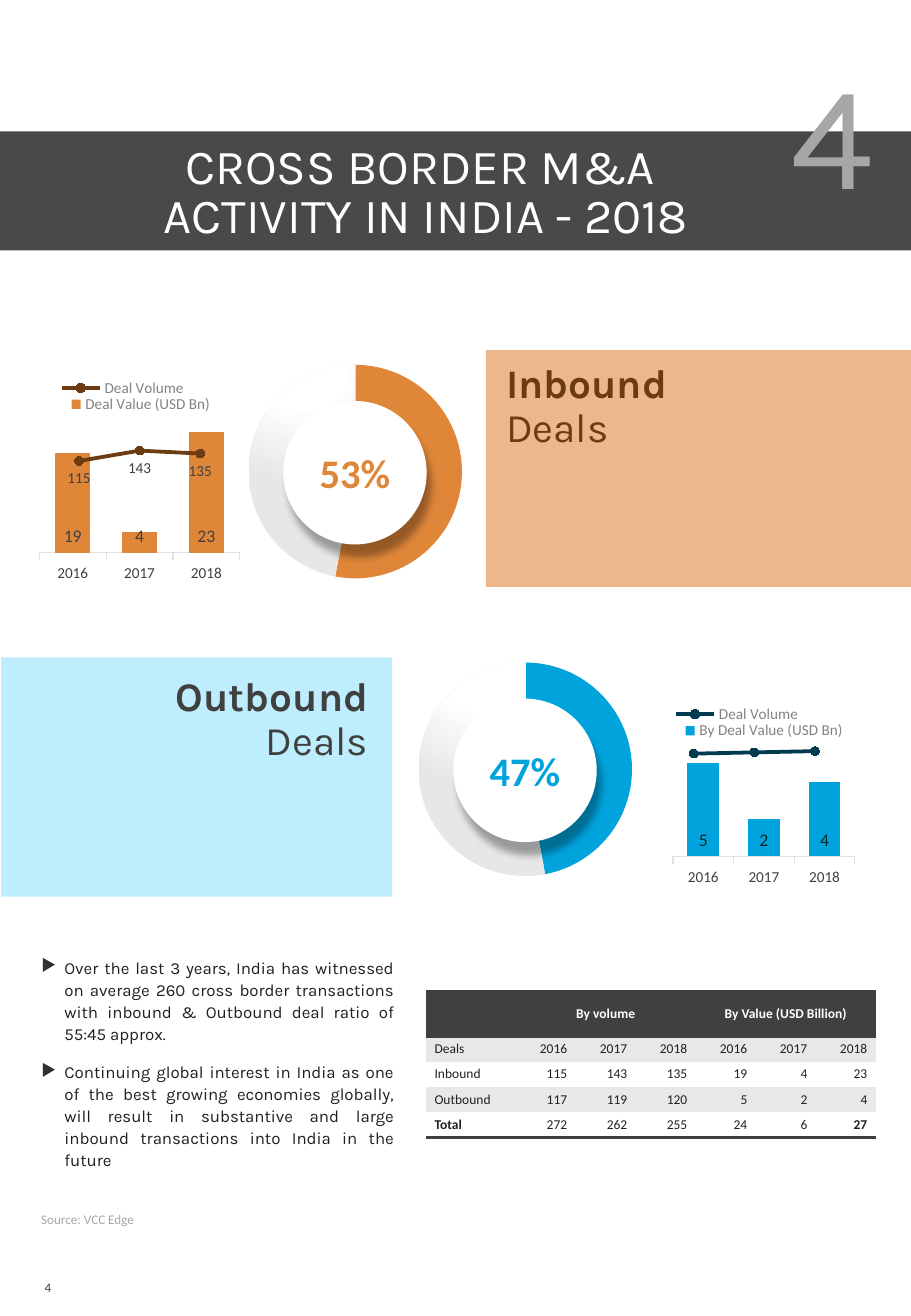
from pptx import Presentation
from pptx.chart.data import CategoryChartData
from pptx.dml.color import RGBColor
from pptx.enum.chart import (XL_CHART_TYPE, XL_LABEL_POSITION, XL_LEGEND_POSITION,
                             XL_MARKER_STYLE, XL_TICK_MARK)
from pptx.enum.shapes import MSO_SHAPE
from pptx.enum.text import MSO_ANCHOR, PP_ALIGN
from pptx.oxml import parse_xml
from pptx.oxml.ns import nsdecls
from pptx.util import Pt

THEME = dict(
    heading="Karla", body="Calibri", white="FFFFFF", band="494949", dark="404040",
    ink="202020", grey="A6A6A6", legend="838383", axis="E2E2E2", stripe="E8E8E8",
    bullet="303030", orange="DF8639", brown="6C3B12", peach="ECB78C",
    blue="01A3DD", navy="013B4F", sky="BEEDFE", value="092927",
    title_size=29, chapter_size=88, deal_size=24, point_size=10, note_size=7.8,
    table_size=8, axis_size=9, value_size=10.5, chart_size=10)

TITLE = "CROSS BORDER M&A \nACTIVITY IN INDIA - 2018"
CHAPTER = PAGE = "4"
SOURCE = "Source: VCC Edge"
YEARS = ("2016", "2017", "2018")
POINTS = (
    "Over the last 3 years, India has witnessed on average 260 cross border transactions "
    "with inbound & Outbound deal ratio of 55:45 approx.",
    "Continuing global interest in India as one of the best growing economies globally, will "
    "result in substantive and large inbound transactions into India in the future")
GROUPS = ("By volume", "By Value (USD Billion)")
DEALS = (
    ("Deals", *YEARS, *YEARS),
    ("Inbound", 115, 143, 135, 19, 4, 23),
    ("Outbound", 117, 119, 120, 5, 2, 4),
    ("Total", 272, 262, 255, 24, 6, 27))

# Boxes are left, top, width, height in points; plots and legends are fractions of a chart.
INBOUND = dict(
    word="Inbound ", share=53, color="orange", text_color="brown", align=PP_ALIGN.LEFT,
    panel=(288, 207.4, 252, 140.4), panel_color="peach", label=(293, 211.7, 130.3, 59.8),
    pie=(101.5, 206.6, 218.2, 146.9),
    bars=dict(name="Deal Value (USD Bn)", values=(19, 4, 23), top=25, label_color="dark",
              box=(20.9, 225.4, 123.8, 121.7), plot=(0.02, 0.2, 0.96, 0.64), legend=(0.15, 0.05)),
    line=dict(name="Deal Volume", values=(115, 143, 135), top=160, color="brown", labels=True,
              box=(10.8, 221.8, 133.9, 77), plot=(0.135, 0.54, 0.805, 0.455), legend=(0.17, 0)))
OUTBOUND = dict(
    word="Outbound ", share=47, color="blue", text_color="dark", align=PP_ALIGN.RIGHT,
    panel=(0.7, 389.5, 231.8, 141.8), panel_color="sky", label=(95, 396.7, 130.3, 59.8),
    pie=(202.3, 383, 218.2, 146.9),
    bars=dict(name="By Deal Value (USD Bn)", values=(5, 2, 4), top=6, label_color="value",
              box=(396.7, 418.3, 112.3, 110.2), plot=(0.02, 0.21, 0.96, 0.6), legend=(0.06, 0.06)),
    line=dict(name="Deal Volume", values=(98, 99, 100), top=120, color="navy", labels=False,
              box=(391, 409.7, 112.3, 110.2), plot=(0.02, 0.19, 0.96, 0.79), legend=(0.06, 0.05)))

GRADIENT = f"""<a:gradFill {nsdecls('a')} rotWithShape="1"><a:gsLst>
<a:gs pos="0"><a:srgbClr val="FFFFFF"/></a:gs><a:gs pos="35000"><a:srgbClr val="FFFFFF"/></a:gs>
<a:gs pos="100000"><a:srgbClr val="E7E7E7"/></a:gs></a:gsLst>
<a:path path="circle"><a:fillToRect l="50000" t="-80000" r="50000" b="180000"/></a:path></a:gradFill>"""
SHADOW = f"""<a:effectLst {nsdecls('a')}><a:outerShdw blurRad="{Pt(4.5)}" dist="{Pt(8)}" dir="4200000"
algn="tl" rotWithShape="0"><a:srgbClr val="000000"><a:alpha val="33000"/></a:srgbClr>
</a:outerShdw></a:effectLst>"""


def rgb(color):
    return RGBColor.from_string(THEME[color])


def points(box):
    return [Pt(length) for length in box]


def style(font, size, color, family="body", bold=False):
    font.name, font.size, font.bold = THEME[family], Pt(THEME[size]), bold
    font.color.rgb = rgb(color)


def write(frame, paragraphs, size, color, family="body", bold=False, align=PP_ALIGN.LEFT, spacing=None,
          gap=0, bullet=None, margins=(7.2, 3.6, 7.2, 3.6), anchor=MSO_ANCHOR.TOP, wrap=True):
    """Fill a frame; a paragraph is a string or a list of (string, bold) pairs."""
    frame.word_wrap, frame.vertical_anchor = wrap, anchor
    frame.margin_left, frame.margin_top, frame.margin_right, frame.margin_bottom = points(margins)
    for index, content in enumerate(paragraphs):
        paragraph = frame.add_paragraph() if index else frame.paragraphs[0]
        if bullet:
            properties = paragraph._p.get_or_add_pPr()
            properties.set("marL", str(Pt(13.7)))
            properties.set("indent", str(-Pt(13.7)))
            properties.append(parse_xml(
                f'<a:buClr {nsdecls("a")}><a:srgbClr val="{THEME["bullet"]}"/></a:buClr>'))
            properties.append(parse_xml(f'<a:buChar {nsdecls("a")} char="{bullet}"/>'))
        paragraph.alignment = align
        if spacing:
            paragraph.line_spacing = Pt(spacing)
        if index and gap:
            paragraph.space_before = Pt(gap)
        for words, heavy in [(content, bold)] if isinstance(content, str) else content:
            for number, line in enumerate(words.split("\n")):
                if number:
                    paragraph.add_line_break()
                run = paragraph.add_run()
                run.text = line
                style(run.font, size, color, family, heavy)


def add_text(slide, box, paragraphs, size, color, **options):
    write(slide.shapes.add_textbox(*points(box)).text_frame, paragraphs, size, color, **options)


def add_block(slide, kind, box, color):
    block = slide.shapes.add_shape(kind, *points(box))
    block.shadow.inherit = False
    block.fill.solid()
    block.fill.fore_color.rgb = rgb(color)
    block.line.fill.background()
    return block


def set_layout(parent, position, values):
    for old in parent.xpath("./c:layout"):
        parent.remove(old)
    inner = '<c:layoutTarget val="inner"/>' if len(values) == 4 else ""
    modes = "".join(f'<c:{side}Mode val="edge"/>' for side in "xy")
    sizes = "".join(f'<c:{side} val="{value}"/>' for side, value in zip("xywh", values))
    parent.insert(position, parse_xml(
        f'<c:layout {nsdecls("c")}><c:manualLayout>{inner}{modes}{sizes}</c:manualLayout></c:layout>'))


def add_plain_chart(slide, kind, box, categories, name, values, plot):
    """Add a transparent chart with one series and a fixed plot area."""
    data = CategoryChartData()
    data.categories = categories
    data.add_series(name, values)
    chart = slide.shapes.add_chart(kind, *points(box), data).chart
    chart.has_title = chart.has_legend = False
    style(chart.font, "chart_size", "dark")
    chart.element.xpath("./c:chart")[0].addnext(parse_xml(
        f'<c:spPr {nsdecls("c", "a")}><a:noFill/><a:ln><a:noFill/></a:ln></c:spPr>'))
    set_layout(chart.element.xpath(".//c:plotArea")[0], 0, plot)
    return chart, chart.plots[0].series[0]


def add_trend(slide, kind, part, categories):
    chart, series = add_plain_chart(slide, kind, part["box"], categories, part["name"],
                                    part["values"], part["plot"])
    chart.plots[0].vary_by_categories = False
    chart.has_legend = True
    chart.legend.position = XL_LEGEND_POSITION.TOP
    chart.legend.include_in_layout = False
    style(chart.legend.font, "axis_size", "legend")
    set_layout(chart.element.xpath(".//c:legend")[0], 1, part["legend"])
    scale = chart.value_axis
    scale.minimum_scale, scale.maximum_scale = 0, part["top"]
    scale.has_major_gridlines = scale.visible = False
    return chart, series


def add_labels(series, position, size, color):
    labels = series.data_labels
    labels.show_value, labels.position = True, position
    style(labels.font, size, color)


def add_bars(slide, side):
    part = side["bars"]
    chart, series = add_trend(slide, XL_CHART_TYPE.COLUMN_CLUSTERED, part, YEARS)
    chart.plots[0].gap_width, chart.plots[0].overlap = 90, 44
    series.format.fill.solid()
    series.format.fill.fore_color.rgb = rgb(side["color"])
    add_labels(series, XL_LABEL_POSITION.INSIDE_BASE, "value_size", part["label_color"])
    axis = chart.category_axis
    axis.major_tick_mark = XL_TICK_MARK.OUTSIDE
    axis.format.line.color.rgb, axis.format.line.width = rgb("axis"), Pt(0.75)
    style(axis.tick_labels.font, "axis_size", "dark")


def add_line(slide, side):
    part = side["line"]
    chart, series = add_trend(slide, XL_CHART_TYPE.LINE_MARKERS, part, ("1", "2", "3"))
    chart.category_axis.visible = series.smooth = False
    marker = series.marker
    marker.style, marker.size = XL_MARKER_STYLE.CIRCLE, 5
    marker.format.fill.solid()
    marker.format.fill.fore_color.rgb = marker.format.line.color.rgb = rgb(part["color"])
    series.format.line.color.rgb, series.format.line.width = rgb(part["color"]), Pt(2.25)
    if part["labels"]:
        add_labels(series, XL_LABEL_POSITION.BELOW, "axis_size", "dark")


def add_share(slide, side):
    """Add the pie and the white disc that turns it into a ring."""
    left, top, width, _ = side["pie"]
    chart, series = add_plain_chart(slide, XL_CHART_TYPE.PIE, side["pie"], ("1", "2"), "Series 1",
                                    (side["share"], 100 - side["share"]), (0.21, 0.065, 0.58, 0.863))
    share, rest = (series.points[index].format.fill for index in range(2))
    share.solid()
    share.fore_color.rgb = rgb(side["color"])
    rest.background()
    empty = chart.element.xpath(".//c:dPt[2]/c:spPr/a:noFill")[0]
    empty.getparent().replace(empty, parse_xml(GRADIENT))
    disc = add_block(slide, MSO_SHAPE.OVAL, (left + width / 2 - 42.7, top + 31, 85, 85), "white")
    effects = disc.element.xpath("./p:spPr/a:effectLst")[0]
    effects.getparent().replace(effects, parse_xml(SHADOW))
    write(disc.text_frame, [f"{side['share']}%"], "deal_size", side["color"], bold=True,
          align=PP_ALIGN.CENTER, anchor=MSO_ANCHOR.MIDDLE, margins=(0, 0, 0, 0))


def add_deals(slide):
    rows = [("", GROUPS[0], "", "", GROUPS[1], "", ""), *DEALS]
    frame = slide.shapes.add_table(len(rows), 7, *points((252.6, 587.4, 266.7, 76)))
    frame.element.xpath(".//a:tableStyleId")[0].text = "{2D5ABB26-0587-4C30-8999-92F81FD0307C}"
    table, last = frame.table, len(rows) - 1
    for index, column in enumerate(table.columns):
        column.width = Pt(35.6 if index else 53.1)
    for r, row in enumerate(rows):
        table.rows[r].height = Pt(15 if r else 16)
        for c, entry in enumerate(row):
            cell = table.cell(r, c)
            cell.fill.solid()
            cell.fill.fore_color.rgb = rgb(("white", "stripe")[r % 2] if r else "dark")
            for position, edge in enumerate({0: "TB", last: "B"}.get(r, "")):
                cell._tc.get_or_add_tcPr().insert(position, parse_xml(
                    f'<a:ln{edge} {nsdecls("a")} w="{Pt(2)}"><a:solidFill><a:srgbClr '
                    f'val="{THEME["dark"]}"/></a:solidFill></a:ln{edge}>'))
            align = PP_ALIGN.CENTER if not r else PP_ALIGN.RIGHT if c else PP_ALIGN.LEFT
            write(cell.text_frame, [str(entry)], "table_size", "ink" if r else "white", align=align,
                  bold=not r or (r == last and c in (0, 6)), wrap=None)
            cell.vertical_anchor = MSO_ANCHOR.MIDDLE
            cell.margin_left = cell.margin_right = Pt(5)
            cell.margin_top = cell.margin_bottom = Pt(2.5)
    for first in (1, 4):
        table.cell(0, first).merge(table.cell(0, first + 2))


def main():
    deck = Presentation()
    deck.slide_width, deck.slide_height = Pt(540), Pt(779.8)
    slide = deck.slides.add_slide(deck.slide_layouts[6])
    add_block(slide, MSO_SHAPE.RECTANGLE, (0, 77.8, 540, 70.6), "band")
    heading = dict(family="heading", align=PP_ALIGN.CENTER, margins=(8.6, 4.3, 8.6, 4.3))
    add_text(slide, (36.7, 82, 432, 67.7), [TITLE], "title_size", "white", spacing=29, **heading)
    add_text(slide, (460, 100.8, 23.8, 48.2), [CHAPTER], "chapter_size", "grey", spacing=25, **heading)
    for side in (INBOUND, OUTBOUND):
        add_bars(slide, side)
        add_share(slide, side)
        add_line(slide, side)
        add_block(slide, MSO_SHAPE.RECTANGLE, side["panel"], side["panel_color"])
        add_text(slide, side["label"], [[(side["word"], True), ("Deals", False)]], "deal_size",
                 side["text_color"], family="heading", align=side["align"], spacing=26)
    add_deals(slide)
    add_text(slide, (7.2, 559.4, 251.3, 141), POINTS, "point_size", "ink", family="heading",
             align=PP_ALIGN.JUSTIFY, spacing=13, gap=10, bullet="▶", anchor=MSO_ANCHOR.MIDDLE,
             margins=(17.3, 3.6, 25.2, 3.6))
    add_text(slide, (17.3, 714.2, 70.6, 16.6), [SOURCE], "note_size", "grey", wrap=False)
    add_text(slide, (19.4, 754.6, 18.7, 16.6), [PAGE], "note_size", "dark", wrap=False)
    deck.save("out.pptx")


if __name__ == "__main__":
    main()
